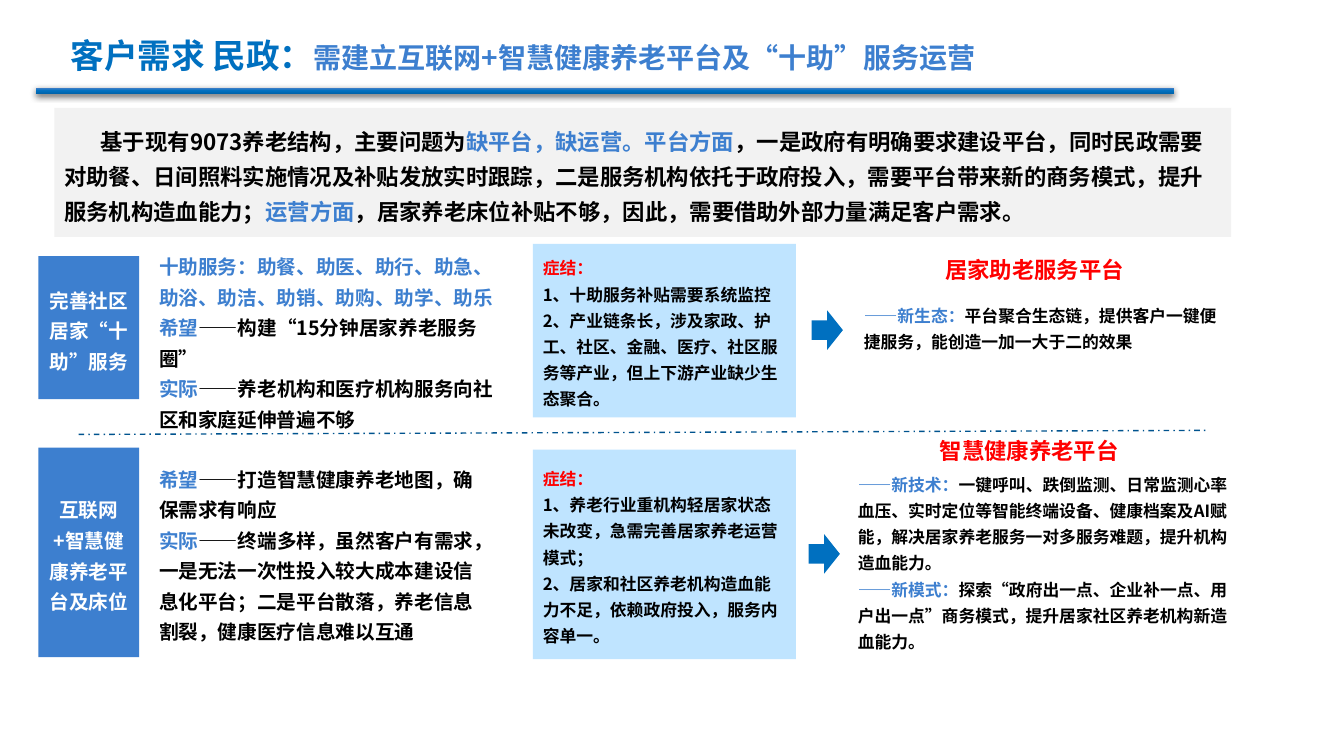
from dataclasses import dataclass

from lxml import etree
from pptx import Presentation
from pptx.dml.color import RGBColor
from pptx.enum.dml import MSO_LINE
from pptx.enum.shapes import MSO_CONNECTOR, MSO_SHAPE
from pptx.enum.text import MSO_ANCHOR, MSO_AUTO_SIZE, PP_ALIGN
from pptx.oxml.ns import qn
from pptx.util import Inches, Pt

RECT, ROUND, ARROW = MSO_SHAPE.RECTANGLE, MSO_SHAPE.ROUNDED_RECTANGLE, MSO_SHAPE.RIGHT_ARROW
TOP, MIDDLE = MSO_ANCHOR.TOP, MSO_ANCHOR.MIDDLE
LEFT, CENTER = PP_ALIGN.LEFT, PP_ALIGN.CENTER
GROW, FIXED = MSO_AUTO_SIZE.SHAPE_TO_FIT_TEXT, MSO_AUTO_SIZE.NONE
STRAIGHT, DASH_DOT = MSO_CONNECTOR.STRAIGHT, MSO_LINE.DASH_DOT


@dataclass(frozen=True)
class Theme:
    """Colours, type sizes and spacing of the slide."""
    font: str = "Noto Sans CJK SC"
    blue: str = "3D7FCF"
    deep: str = "0070C0"
    navy: str = "00538E"
    bar: tuple = ("4B81C8", "0070C0", "0064AB")
    pale: str = "BFE4FF"
    grey: str = "F2F2F2"
    red: str = "FF0000"
    black: str = "000000"
    white: str = "FFFFFF"
    title: int = 24
    subtitle: int = 20
    lead: int = 16
    body: int = 14
    small: int = 12
    spacing: float = 1.3


T = Theme()
GRID = Inches(0.1)
LABEL, ISSUE = (3.8, 10), (52.85, 26.1)

TITLE = [[("客户需求 民政：", T.deep), ("需建立互联网+智慧健康养老平台及“十助”服务运营", T.blue)]]
SUMMARY = [[
    ("基于现有9073养老结构，主要问题为", T.black),
    ("缺平台，缺运营。平台方面", T.blue),
    ("，一是政府有明确要求建设平台，同时民政需要对助餐、日间照料实施情况及补贴发放实时跟踪，"
     "二是服务机构依托于政府投入，需要平台带来新的商务模式，提升服务机构造血能力；", T.black),
    ("运营方面", T.blue),
    ("，居家养老床位补贴不够，因此，需要借助外部力量满足客户需求。", T.black),
]]

ROWS = [
    dict(
        label=("完善社区居家“十助”服务", 25.4, 14.2),
        needs=((14.8, 24.1, 36.6, 16.8), [
            [("十助服务：助餐、助医、助行、助急、助浴、助洁、助销、助购、助学、助乐", T.blue)],
            [("希望", T.blue), ("——构建“15分钟居家养老服务圈”", T.black)],
            [("实际", T.blue), ("——养老机构和医疗机构服务向社区和家庭延伸普遍不够", T.black)],
        ]),
        issue=((24.2, 17.2), [
            "1、十助服务补贴需要系统监控",
            "2、产业链条长，涉及家政、护工、社区、金融、医疗、社区服务等产业，但上下游产业缺少生态聚合。",
        ]),
        arrow=(80.5, 30.8),
        heading=("居家助老服务平台", (92.7, 24.1, 19.8, 4.5)),
        answer=((84.7, 29.2, 38.4, 6.2), [
            [("——新生态：", T.blue),
             ("平台聚合生态链，提供客户一键便捷服务，能创造一加一大于二的效果", T.black)],
        ]),
    ),
    dict(
        label=("互联网+智慧健康养老平台及床位", 44.4, 20.8),
        needs=((14.8, 45.2, 34.7, 21), [
            [("希望", T.blue), ("——打造智慧健康养老地图，确保需求有响应", T.black)],
            [("实际", T.blue),
             ("——终端多样，虽然客户有需求，一是无法一次性投入较大成本建设信息化平台；"
              "二是平台散落，养老信息割裂，健康医疗信息难以互通", T.black)],
        ]),
        issue=((44.6, 20.8), [
            "1、养老行业重机构轻居家状态未改变，急需完善居家养老运营模式；",
            "2、居家和社区养老机构造血能力不足，依赖政府投入，服务内容单一。",
        ]),
        arrow=(80.2, 53),
        heading=("智慧健康养老平台", (91.1, 42.1, 22, 4.5)),
        answer=((84.1, 46, 39, 19.4), [
            [("——新技术：", T.blue),
             ("一键呼叫、跌倒监测、日常监测心率血压、实时定位等智能终端设备、健康档案及AI赋能，"
              "解决居家养老服务一对多服务难题，提升机构造血能力。", T.black)],
            [("——新模式：", T.blue),
             ("探索“政府出一点、企业补一点、用户出一点”商务模式，提升居家社区养老机构新造血能力。", T.black)],
        ]),
    ),
]


def cells(*lengths):
    """Turn grid units into slide lengths."""
    return [round(n * GRID) for n in lengths]


def style_run(r, size, color):
    """Set size, colour and the Latin and East Asian typefaces of a run."""
    r.font.size, r.font.bold = Pt(size), True
    r.font.color.rgb = RGBColor.from_string(color)
    r.font.name = T.font
    etree.SubElement(r.font._element, qn("a:ea"), typeface=T.font)


def write(sp, paragraphs, size, align=LEFT, anchor=TOP, spacing=T.spacing, auto=FIXED, wrap=True):
    """Fill a shape with paragraphs made of coloured spans."""
    tf = sp.text_frame
    tf.word_wrap, tf.auto_size, tf.vertical_anchor = wrap, auto, anchor
    for i, spans in enumerate(paragraphs):
        p = tf.add_paragraph() if i else tf.paragraphs[0]
        p.alignment, p.line_spacing = align, spacing
        for text, color in spans:
            r = p.add_run()
            r.text = text
            style_run(r, size, color)
    return tf


def add_text(s, box, paragraphs, size, **options):
    """Add a plain text box."""
    return write(s.shapes.add_textbox(*cells(*box)), paragraphs, size, **options)


def add_block(s, box, color, kind=RECT):
    """Add a flat filled shape without outline."""
    sp = s.shapes.add_shape(kind, *cells(*box))
    sp.shadow.inherit = False
    sp.fill.solid()
    sp.fill.fore_color.rgb = RGBColor.from_string(color)
    sp.line.fill.background()
    return sp


def add_title(s):
    """Add the two-size title and the shaded bar below it."""
    tf = add_text(s, (7, 3.9, 105.3, 3.6), TITLE, T.title, anchor=MIDDLE, spacing=0.9, auto=GROW)
    tf.margin_left = tf.margin_right = tf.margin_top = tf.margin_bottom = 0
    tf.paragraphs[0].runs[1].font.size = Pt(T.subtitle)
    bar = add_block(s, (3.6, 8.7, 112.8, 0.6), T.deep, ROUND)
    bar.fill.gradient()
    bar.fill.gradient_angle = 270
    stops = bar._element.spPr.find(".//" + qn("a:gsLst"))
    stops.clear()
    for i, color in enumerate(T.bar):
        stop = etree.SubElement(stops, qn("a:gs"), pos=str(i * 50000))
        etree.SubElement(stop, qn("a:srgbClr"), val=color)
    effects = bar._element.spPr.find(qn("a:effectLst"))
    shadow = etree.SubElement(effects, qn("a:outerShdw"), blurRad=str(Pt(4.5)),
                              dist=str(Pt(1.5)), dir="5400000", rotWithShape="0")
    tint = etree.SubElement(shadow, qn("a:srgbClr"), val=T.black)
    etree.SubElement(tint, qn("a:alpha"), val="63000")


def add_summary(s):
    """Add the grey summary band with an indented first line."""
    sp = add_block(s, (5.4, 10.7, 116.7, 12.8), T.grey)
    p = write(sp, SUMMARY, T.lead, anchor=MIDDLE).paragraphs[0]
    p._p.get_or_add_pPr().set("indent", str(Inches(0.36)))


def add_divider(s):
    """Add the dashed line between the two rows."""
    line = s.shapes.add_connector(STRAIGHT, *cells(7.8, 43.1, 119.6, 42.7))
    line.line.color.rgb = RGBColor.from_string(T.navy)
    line.line.width, line.line.dash_style = Pt(1), DASH_DOT
    etree.SubElement(line._element.spPr, qn("a:effectLst"))


def add_row(s, label, needs, issue, arrow, heading, answer):
    """Add one row from label through needs and issue to the answer."""
    text, top, height = label
    sp = add_block(s, (LABEL[0], top, LABEL[1], height), T.blue)
    write(sp, [[(text, T.white)]], T.body, align=CENTER, anchor=MIDDLE)
    add_text(s, *needs, T.body)
    (top, height), points = issue
    sp = add_block(s, (ISSUE[0], top, ISSUE[1], height), T.pale)
    lines = [[("症结：", T.red)]] + [[(point, T.black)] for point in points]
    write(sp, lines, T.small, anchor=MIDDLE)
    add_block(s, (*arrow, 3.1, 3.9), T.deep, ARROW)
    text, box = heading
    add_text(s, box, [[(text, T.red)]], T.lead, align=CENTER, auto=GROW, wrap=False)
    add_text(s, *answer, T.small, auto=GROW)


def main():
    """Build and save the slide."""
    prs = Presentation()
    prs.slide_width, prs.slide_height = Inches(13.33), Inches(7.5)
    s = prs.slides.add_slide(prs.slide_layouts[6])
    add_title(s)
    add_summary(s)
    for row in ROWS:
        add_row(s, **row)
    add_divider(s)
    prs.save("out.pptx")


if __name__ == "__main__":
    main()
